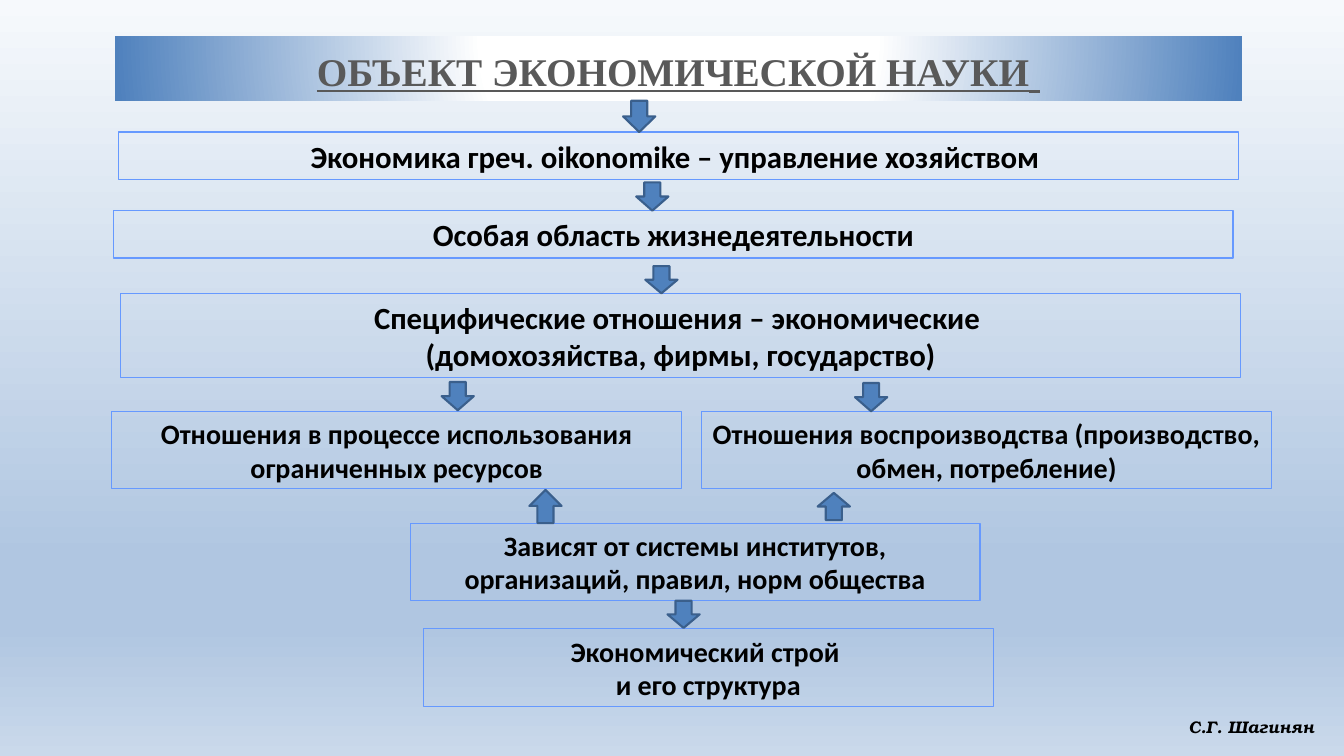
import pptx
import pptx.util
import pptx.dml.color
import pptx.enum.shapes
import pptx.enum.text
import pptx.oxml
import pptx.oxml.ns

Inches = pptx.util.Inches
Pt = pptx.util.Pt
Kind = pptx.enum.shapes.MSO_SHAPE
Text = pptx.enum.text

HUES = {
    "ink": "000000",
    "title": "595959",
    "arrow": "4F81BD",
    "edge": "3A5F8C",
    "frame": "6699FF",
    "white": "FFFFFF",
    "pale": "F6F9FC",
    "mid": "B0C6E1",
    "low": "CAD9EB",
}


def color(name):
    return pptx.dml.color.RGBColor.from_string(HUES[name])


def write(para, text, size=20, font="Calibri", hue="ink", italic=False, under=False):
    """Add one bold run to a paragraph."""
    run = para.add_run()
    run.text = text
    face = run.font
    face.name, face.size = font, Pt(size)
    face.bold, face.italic, face.underline = True, italic or None, under or None
    face.color.rgb = color(hue)


def blend(fill, root, stops, shade):
    """Turn a fill under root into a gradient with the given stops and shade XML."""
    fill.gradient()
    grad = root.xpath(".//a:gradFill")[0]
    marks = "".join(
        f'<a:gs pos="{pos * 1000}"><a:srgbClr val="{HUES[hue]}"/></a:gs>'
        for pos, hue in stops
    )
    space = pptx.oxml.ns.nsdecls("a")
    fresh = pptx.oxml.parse_xml(
        f'<a:gradFill {space} rotWithShape="1"><a:gsLst>{marks}</a:gsLst>{shade}</a:gradFill>'
    )
    grad.getparent().replace(grad, fresh)


class Board:
    """Holds the slide and draws its elements in one style."""

    def __init__(self, slide):
        self.slide = slide

    def back(self):
        stops = [(0, "pale"), (74, "mid"), (83, "mid"), (100, "low")]
        blend(self.slide.background.fill, self.slide.element, stops,
              '<a:lin ang="5400000" scaled="0"/>')

    def shape(self, kind, left, top, width, height):
        item = self.slide.shapes.add_shape(
            kind, Inches(left), Inches(top), Inches(width), Inches(height))
        item.shadow.inherit = False
        return item

    def fit(self, item):
        frame = item.text_frame
        frame.word_wrap = True
        frame.auto_size = Text.MSO_AUTO_SIZE.SHAPE_TO_FIT_TEXT
        return frame

    def title(self, text, left, top, width, height):
        item = self.shape(Kind.RECTANGLE, left, top, width, height)
        item.line.fill.background()
        blend(item.fill, item.element, [(0, "white"), (35, "white"), (100, "arrow")],
              '<a:path path="circle"><a:fillToRect l="50000" t="-80000" '
              'r="50000" b="180000"/></a:path>')
        para = self.fit(item).paragraphs[0]
        para.alignment = Text.PP_ALIGN.CENTER
        for part, size in ((text, 28), (" ", 32)):
            write(para, part, size, font="Times New Roman", hue="title", under=True)

    def box(self, text, left, top, width, height, size):
        item = self.shape(Kind.RECTANGLE, left, top, width, height)
        item.fill.background()
        item.line.color.rgb = color("frame")
        item.line.width = Pt(0.75)
        frame = self.fit(item)
        for num, line in enumerate(text.split("\n")):
            para = frame.add_paragraph() if num else frame.paragraphs[0]
            para.alignment = Text.PP_ALIGN.CENTER
            write(para, line, size)

    def arrow(self, left, top, height, kind=Kind.DOWN_ARROW):
        item = self.shape(kind, left, top, 0.32, height)
        item.fill.solid()
        item.fill.fore_color.rgb = color("arrow")
        item.line.color.rgb = color("edge")
        item.line.width = Pt(1.5)

    def sign(self, text, left, top, width, height):
        item = self.slide.shapes.add_textbox(
            Inches(left), Inches(top), Inches(width), Inches(height))
        para = self.fit(item).paragraphs[0]
        write(para, text, 12, font="TeX Gyre Bonum", italic=True)


WIDE = [
    ("Экономика греч. oikonomike – управление хозяйством ", 1.18, 1.31, 0.47),
    ("Особая область жизнедеятельности", 1.13, 2.09, 0.47),
    ("Специфические отношения – экономические \n(домохозяйства, фирмы, государство)",
     1.2, 2.91, 0.84),
]
HALF = [
    ("Отношения в процессе использования ограниченных ресурсов", 1.11, 4.08),
    ("Отношения воспроизводства (производство, обмен, потребление)", 6.96, 4.08),
    ("Зависят от системы институтов, организаций, правил, норм общества", 4.07, 5.19),
    ("Экономический строй \nи его структура", 4.2, 6.24),
]
DOWN = [(6.18, 1, 0.31), (6.31, 1.81, 0.28), (6.4, 2.64, 0.27),
        (4.38, 3.79, 0.28), (8.48, 3.8, 0.28), (6.62, 5.96, 0.27)]
RISE = [(5.25, 4.86, 0.33), (8.11, 4.89, 0.27)]


def main():
    deck = pptx.Presentation()
    deck.slide_width, deck.slide_height = Inches(13.33), Inches(7.5)
    board = Board(deck.slides.add_slide(deck.slide_layouts[6]))
    board.back()
    board.title("ОБЪЕКТ ЭКОНОМИЧЕСКОЙ НАУКИ", 1.14, 0.36, 11.18, 0.64)
    for text, left, top, height in WIDE:
        board.box(text, left, top, 11.1, height, 22)
    for text, left, top in HALF:
        board.box(text, left, top, 5.65, 0.77, 20)
    for place in DOWN:
        board.arrow(*place)
    for place in RISE:
        board.arrow(*place, kind=Kind.UP_ARROW)
    board.sign("С.Г. Шагинян", 11.69, 7.06, 1.6, 0.3)
    deck.save("out.pptx")


if __name__ == "__main__":
    main()
